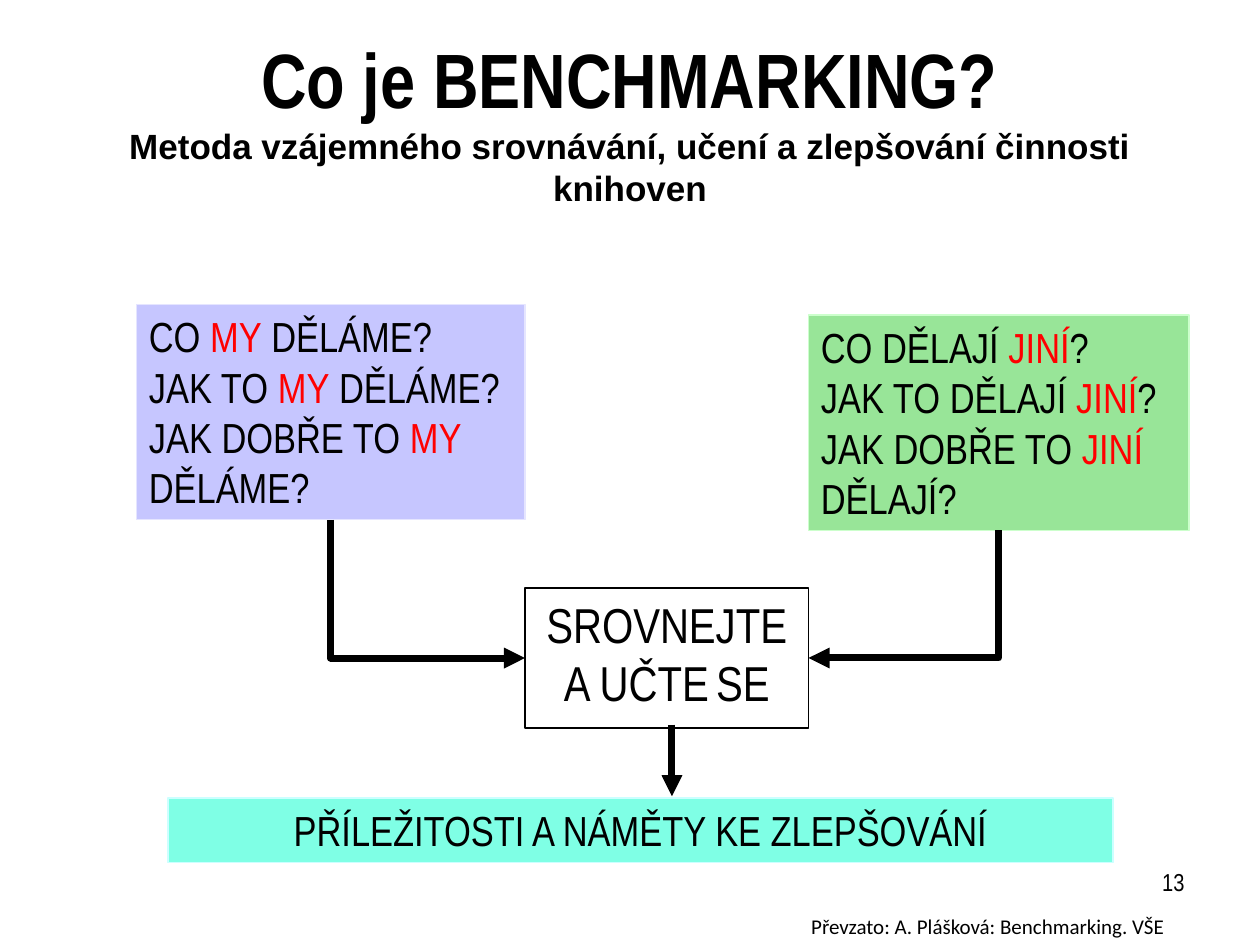
from pptx import Presentation
from pptx.dml.color import RGBColor
from pptx.enum.shapes import MSO_CONNECTOR, MSO_SHAPE
from pptx.enum.text import MSO_ANCHOR, MSO_AUTO_SIZE, PP_ALIGN
from pptx.oxml.ns import qn
from pptx.util import Pt
from lxml.etree import SubElement

NARROW = "Arial Narrow"


def rgb(hex_value):
    return RGBColor.from_string(hex_value)


def add_run(p, text, color="000000", **fmt):
    r = p.add_run()
    r.text = text
    for name, value in fmt.items():
        setattr(r.font, name, value)
    r.font.color.rgb = rgb(color)


def format_frame(tf, anchor=MSO_ANCHOR.TOP):
    fmt = {"word_wrap": True, "auto_size": MSO_AUTO_SIZE.NONE, "vertical_anchor": anchor}
    for name, value in fmt.items():
        setattr(tf, name, value)


def add_title(s, box, title, subtitle):
    sp = s.shapes.title
    for name, value in zip(("left", "top", "width", "height"), box):
        setattr(sp, name, Pt(value))
    tf = sp.text_frame
    format_frame(tf)
    p = tf.paragraphs[0]
    add_run(p, title, size=Pt(44), name=NARROW, bold=True)
    p2 = tf.add_paragraph()
    add_run(p2, subtitle, size=Pt(20), name="Arial", bold=True)
    for p in tf.paragraphs:
        p.alignment = PP_ALIGN.CENTER


def add_box(s, box, line, fill=None):
    """Add a rectangle, half transparent when it has a fill."""
    sp = s.shapes.add_shape(MSO_SHAPE.RECTANGLE, *map(Pt, box))
    sp.shadow.inherit = False
    sp.line.color.rgb = rgb(line)
    sp.line.width = Pt(0.75)
    if fill:
        sp.fill.solid()
        sp.fill.fore_color.rgb = rgb(fill)
        color = sp.fill._xPr.find(qn("a:solidFill"))[0]
        SubElement(color, qn("a:alpha"), val="50000")
    else:
        sp.fill.background()
    format_frame(sp.text_frame)
    return sp


def add_questions(s, box, fill, line, paragraphs, keyword):
    """Add a box of questions with the keyword in red."""
    sp = add_box(s, box, line, fill)
    tf = sp.text_frame
    fmt = {"size": Pt(24), "name": NARROW}
    for i, lines in enumerate(paragraphs):
        p = tf.add_paragraph() if i else tf.paragraphs[0]
        p.alignment = PP_ALIGN.LEFT
        for j, text in enumerate(lines):
            if j:
                p.add_line_break()
            before, after = text.split(keyword)
            add_run(p, before, **fmt)
            add_run(p, keyword, "FF0000", **fmt)
            add_run(p, after, **fmt)
    return sp


def add_compare(s, box):
    sp = add_box(s, box, "000000")
    p = sp.text_frame.paragraphs[0]
    p.alignment = PP_ALIGN.CENTER
    add_run(p, "SROVNEJTE", size=Pt(28), name=NARROW)
    p.add_line_break()
    for text, size in (("A UČTE", 28), (" ", 18), ("SE", 28)):
        add_run(p, text, size=Pt(size), name=NARROW)
    return sp


def add_result(s, box, text):
    sp = add_box(s, box, "CCFFFF", "00FFCC")
    p = sp.text_frame.paragraphs[0]
    p.alignment = PP_ALIGN.CENTER
    add_run(p, text, size=Pt(24), name=NARROW)


def add_arrow(s, kind, x1, y1, x2, y2):
    c = s.shapes.add_connector(kind, x1, y1, x2, y2)
    c.line.color.rgb = rgb("000000")
    c.line.width = Pt(4)
    SubElement(c.line._get_or_add_ln(), qn("a:tailEnd"), type="triangle")
    SubElement(c._element.spPr, qn("a:effectLst"))
    return c


def add_bent_arrow(s, source, target):
    """Go down from the source, then sideways into the target."""
    x1, y1 = source.left + source.width // 2, source.top + source.height
    from_left = source.left < target.left
    x2 = target.left if from_left else target.left + target.width
    y2 = target.top + target.height // 2
    c = add_arrow(s, MSO_CONNECTOR.ELBOW, x1, y1, x2, y2)
    c.begin_connect(source, 2)
    c.end_connect(target, 1 if from_left else 3)
    # The one-bend preset starts sideways, so it is turned by a quarter
    w, h = y2 - y1, abs(x2 - x1)
    c.left, c.top = (x1 + x2 - w) // 2, (y1 + y2 - h) // 2
    c.width, c.height = w, h
    spPr = c._element.spPr
    spPr.find(qn("a:prstGeom")).set("prst", "bentConnector2")
    xfrm = spPr.find(qn("a:xfrm"))
    for name in ("flipH", "flipV"):
        xfrm.attrib.pop(name, None)
    xfrm.set("rot", "16200000" if from_left else "5400000")
    if from_left:
        xfrm.set("flipH", "1")


def add_note(s, box, text, size, font, align):
    tf = s.shapes.add_textbox(*map(Pt, box)).text_frame
    format_frame(tf)
    p = tf.paragraphs[0]
    p.alignment = align
    add_run(p, text, size=Pt(size), name=font)


def main():
    prs = Presentation()
    prs.slide_width, prs.slide_height = Pt(720), Pt(540)
    s = prs.slides.add_slide(prs.slide_layouts[5])
    add_title(s, (20, 14.5, 680, 85), "Co je BENCHMARKING?",
              "Metoda vzájemného srovnávání, učení a zlepšování činnosti knihoven")
    ours = add_questions(
        s, (78, 174, 222, 123), "8F8FFF", "E5E5FF",
        [["CO MY DĚLÁME?", "JAK TO MY DĚLÁME?"], ["JAK DOBŘE TO MY DĚLÁME?"]], "MY")
    others = add_questions(
        s, (462, 180, 217.5, 123), "33CC33", "CCFFCC",
        [["CO DĚLAJÍ JINÍ?", "JAK TO DĚLAJÍ JINÍ?"], ["JAK DOBŘE TO JINÍ DĚLAJÍ?"]], "JINÍ")
    add_result(s, (96, 456, 540, 37), "PŘÍLEŽITOSTI A NÁMĚTY KE ZLEPŠOVÁNÍ")
    compare = add_compare(s, (300, 336, 162, 80))
    for source in (others, ours):
        add_bent_arrow(s, source, compare)
    add_arrow(s, MSO_CONNECTOR.STRAIGHT, *map(Pt, (384, 414, 384, 455)))
    add_note(s, (456.5, 518.5, 252, 21.5), "Převzato: A. Plášková: Benchmarking. VŠE",
             12, "Calibri", PP_ALIGN.LEFT)
    add_note(s, (516, 492, 168, 37.5), "13", 14, NARROW, PP_ALIGN.RIGHT)
    prs.save("out.pptx")


if __name__ == "__main__":
    main()
